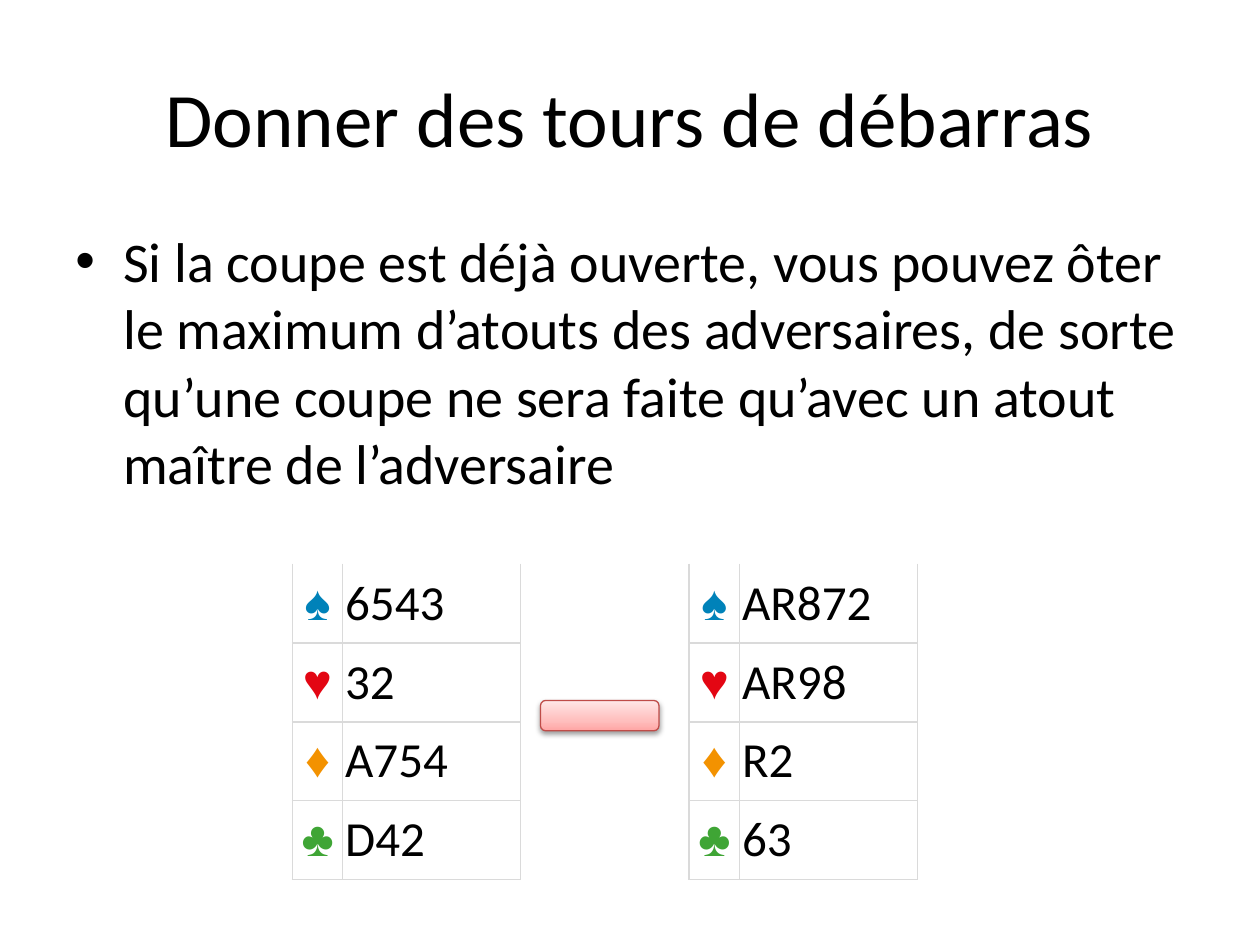
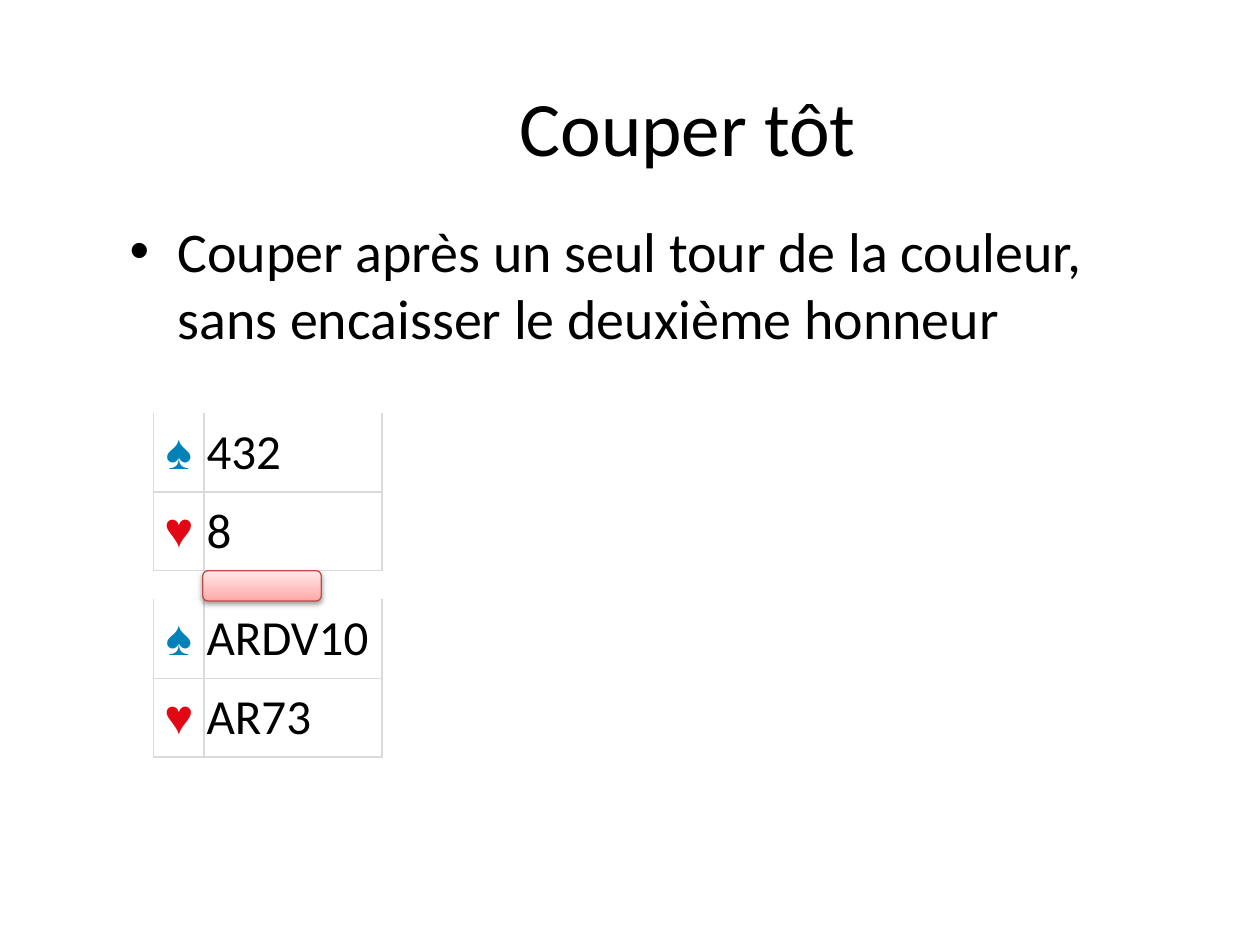
from dataclasses import dataclass

from lxml.etree import SubElement
from pptx import Presentation
from pptx.dml.color import RGBColor
from pptx.enum.shapes import MSO_SHAPE
from pptx.enum.text import MSO_ANCHOR, PP_ALIGN
from pptx.oxml.ns import qn
from pptx.slide import Slide
from pptx.util import Inches, Length, Pt

# Shared colours, fonts and measures
BLACK = RGBColor(0x00, 0x00, 0x00)
WHITE = RGBColor(0xFF, 0xFF, 0xFF)
GRID = RGBColor(0xDA, 0xDA, 0xDA)
TRAY_LINE = RGBColor(0xBF, 0x4C, 0x48)
TRAY_STOPS = (
    (0, RGBColor(0xFF, 0xA6, 0xA5)),
    (35, RGBColor(0xFF, 0xC0, 0xBF)),
    (100, RGBColor(0xFF, 0xE7, 0xE7)),
)
SUITS = (
    ("♠", RGBColor(0x00, 0x82, 0xB9)),
    ("♥", RGBColor(0xE3, 0x06, 0x13)),
    ("♦", RGBColor(0xF3, 0x92, 0x00)),
    ("♣", RGBColor(0x3F, 0xA5, 0x35)),
)
TEXT_FONT = "Calibri"
SUIT_FONT = "Times New Roman"
COLUMN_WIDTHS = (Inches(0.4), Inches(1.41))
ROW_HEIGHT = Inches(1.25) // 2
CELL_MARGIN = Inches(0.02)
BULLET_INDENT = Inches(0.38)


@dataclass(frozen=True)
class Box:
    left: float
    top: float
    width: float
    height: float

    def lengths(self) -> tuple[Length, ...]:
        return tuple(Inches(n) for n in (self.left, self.top, self.width, self.height))


@dataclass(frozen=True)
class Hand:
    """Cards held in each suit, spades first."""
    left: float
    top: float
    cards: tuple[str, ...]


@dataclass(frozen=True)
class Lesson:
    title: str
    title_box: Box
    advice: str
    advice_box: Box
    hands: tuple[Hand, ...]
    tray_box: Box


LESSONS = (
    Lesson(
        "Donner des tours de débarras", Box(0.5, 0.3, 9, 1.25),
        "Si la coupe est déjà ouverte, vous pouvez ôter le maximum d’atouts "
        "des adversaires, de sorte qu’une coupe ne sera faite qu’avec un atout "
        "maître de l’adversaire",
        Box(0.5, 1.75, 9, 2.31),
        (Hand(2.32, 4.48, ("6543", "32", "A754", "D42")),
         Hand(5.47, 4.48, ("AR872", "AR98", "R2", "63"))),
        Box(4.29, 5.56, 0.94, 0.24),
    ),
    Lesson(
        "Couper tôt", Box(0.96, 0.37, 9, 1.25),
        "Couper après un seul tour de la couleur, sans encaisser le deuxième honneur",
        Box(0.93, 1.67, 8.43, 2.74),
        (Hand(1.22, 3.28, ("432", "8")),
         Hand(1.22, 4.76, ("ARDV10", "AR73"))),
        Box(1.61, 4.53, 0.94, 0.24),
    ),
)


def write_text(frame, text: str, *, size: int, font: str = TEXT_FONT,
               color: RGBColor = BLACK, align: PP_ALIGN = PP_ALIGN.LEFT,
               anchor: MSO_ANCHOR = MSO_ANCHOR.MIDDLE, space_after: int = 0,
               bullet: bool = False) -> None:
    frame.word_wrap = True
    frame.vertical_anchor = anchor
    para = frame.paragraphs[0]
    para.alignment = align
    para.space_after = Pt(space_after)
    if bullet:
        properties = para._p.get_or_add_pPr()
        properties.set("marL", str(BULLET_INDENT))
        properties.set("indent", str(-BULLET_INDENT))
        SubElement(properties, qn("a:buFont"), typeface="Arial")
        SubElement(properties, qn("a:buChar"), char="•")
    span = para.add_run()
    span.text = text
    span.font.size = Pt(size)
    span.font.name = font
    span.font.color.rgb = color


def add_color(parent, color: RGBColor):
    return SubElement(parent, qn("a:srgbClr"), val=str(color))


def draw_borders(cell, sides: str) -> None:
    properties = cell._tc.get_or_add_tcPr()
    for side in sides:
        line = SubElement(properties, qn(f"a:ln{side}"), w=str(Pt(1)))
        add_color(SubElement(line, qn("a:solidFill")), GRID)


def add_hand(page: Slide, hand: Hand) -> None:
    rows = len(hand.cards)
    table = page.shapes.add_table(
        rows, 2, Inches(hand.left), Inches(hand.top),
        sum(COLUMN_WIDTHS), ROW_HEIGHT * rows).table
    table.first_row = table.horz_banding = False
    for column, width in zip(table.columns, COLUMN_WIDTHS):
        column.width = width
    for index, (cards, (symbol, color)) in enumerate(zip(hand.cards, SUITS)):
        table.rows[index].height = ROW_HEIGHT
        suit_cell, cards_cell = table.rows[index].cells
        for cell in (suit_cell, cards_cell):
            # The grid is open above the first row
            draw_borders(cell, "LRTB" if index else "LRB")
            cell.fill.solid()
            cell.fill.fore_color.rgb = WHITE
            cell.margin_left = cell.margin_right = CELL_MARGIN
            cell.margin_top = cell.margin_bottom = CELL_MARGIN
            cell.vertical_anchor = MSO_ANCHOR.MIDDLE
        write_text(suit_cell.text_frame, symbol, size=28, font=SUIT_FONT,
                   color=color, align=PP_ALIGN.CENTER, space_after=14)
        write_text(cards_cell.text_frame, cards, size=28, space_after=14)


def add_tray(page: Slide, box: Box) -> None:
    tray = page.shapes.add_shape(MSO_SHAPE.ROUNDED_RECTANGLE, *box.lengths())
    tray.line.color.rgb = TRAY_LINE
    tray.line.width = Pt(0.75)
    # Three-stop gradient, rising from the bottom edge
    tray.fill.gradient()
    tray.fill.gradient_angle = 90
    properties = tray._element.spPr
    stops = properties.find(f"{qn('a:gradFill')}/{qn('a:gsLst')}")
    for stop in list(stops):
        stops.remove(stop)
    for percent, color in TRAY_STOPS:
        add_color(SubElement(stops, qn("a:gs"), pos=str(percent * 1000)), color)
    # Soft shadow below
    tray.shadow.inherit = False
    shadow = SubElement(properties.find(qn("a:effectLst")), qn("a:outerShdw"),
                        blurRad=str(Pt(3.1)), dist=str(Pt(1.6)),
                        dir="5400000", rotWithShape="0")
    SubElement(add_color(shadow, BLACK), qn("a:alpha"), val="38000")


def add_lesson(deck, lesson: Lesson) -> None:
    page = deck.slides.add_slide(deck.slide_layouts[5])
    # Title
    title = page.shapes.title
    title.left, title.top, title.width, title.height = lesson.title_box.lengths()
    write_text(title.text_frame, lesson.title, size=44, align=PP_ALIGN.CENTER)
    # Hands and the tray between them
    for hand in lesson.hands:
        add_hand(page, hand)
    add_tray(page, lesson.tray_box)
    # Advice
    advice = page.shapes.add_textbox(*lesson.advice_box.lengths())
    write_text(advice.text_frame, lesson.advice, size=32,
               anchor=MSO_ANCHOR.TOP, bullet=True)


def main() -> None:
    deck = Presentation()
    deck.slide_width, deck.slide_height = Inches(10), Inches(7.5)
    for lesson in LESSONS:
        add_lesson(deck, lesson)
    deck.save("out.pptx")


if __name__ == "__main__":
    main()
